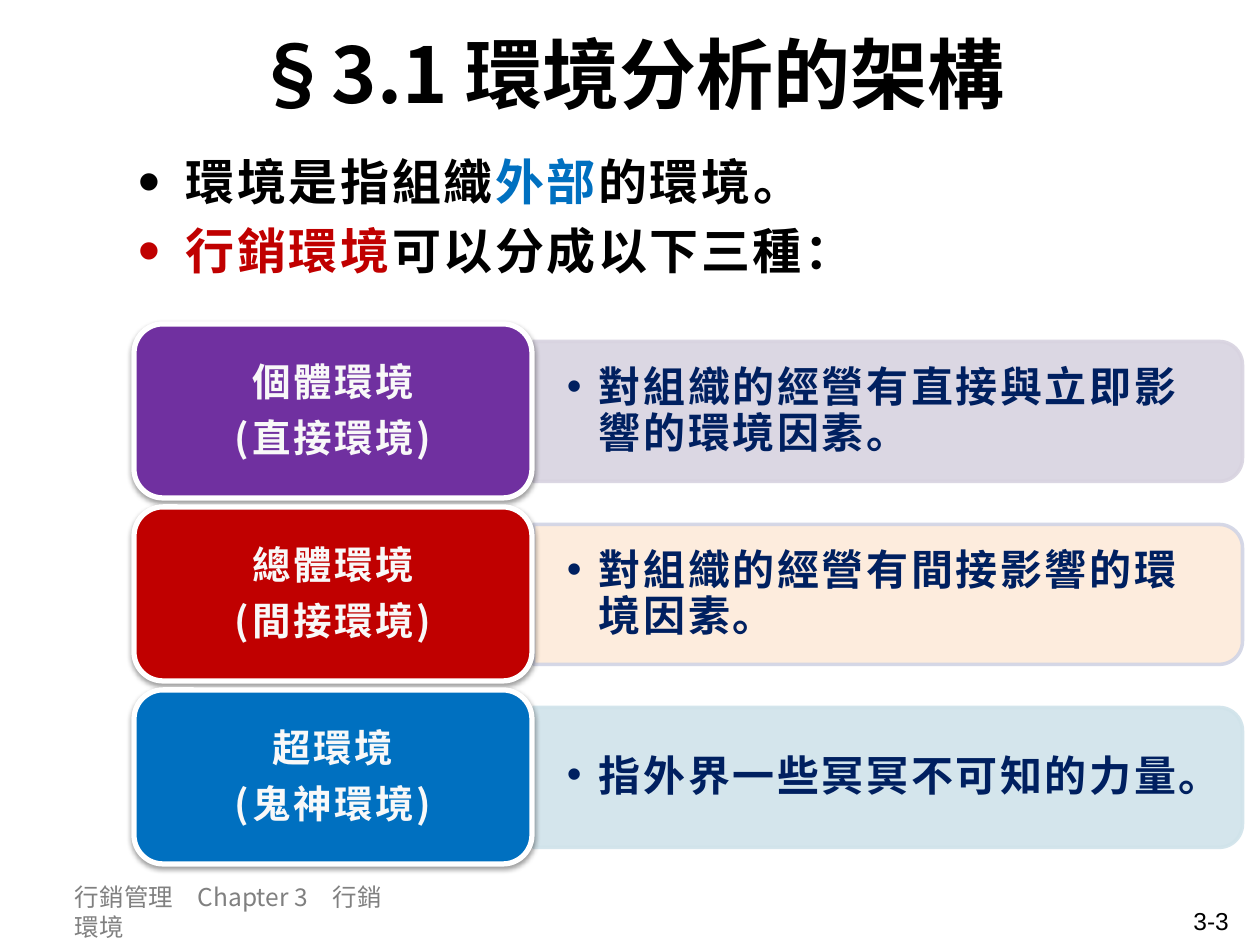
"""Build the slide on the framework of environment analysis."""
from dataclasses import dataclass

from lxml.etree import SubElement
from pptx import Presentation
from pptx.dml.color import RGBColor
from pptx.enum.shapes import MSO_SHAPE as Shape
from pptx.enum.text import MSO_ANCHOR as Anchor, PP_ALIGN as Align
from pptx.oxml.ns import qn
from pptx.util import Emu, Pt

PX = 914400 // 126
CJK = "Noto Sans CJK SC"
BLACK, NAVY, WHITE = "000000", "002060", "FFFFFF"
ROW_TOP, ROW_STEP = 324, 183


@dataclass(frozen=True)
class Box:
    left: int
    top: int
    width: int
    height: int

    def emu(self) -> list[Emu]:
        return [Emu(n * PX) for n in (self.left, self.top, self.width, self.height)]


@dataclass(frozen=True)
class Style:
    size: int
    color: str
    leading: int | None = None
    bold: bool = True
    tracking: int = 0
    font: str = CJK
    align: Align = Align.LEFT
    gap: float = 0
    indent: int = 0
    bullet_percent: int = 100


@dataclass(frozen=True)
class Environment:
    name: str
    kind: str
    description: str
    card: str
    bar: str
    edge: str


Line = list[tuple[str, str]]

TITLE = Style(44, BLACK, align=Align.CENTER)
BODY = Style(28, BLACK, 34, tracking=150, gap=5.6, indent=48, bullet_percent=130)
DESCRIPTION = Style(24, NAVY, 26, tracking=150, indent=32)
LABEL = Style(22, "F8F8F8", 24, tracking=150, align=Align.CENTER, gap=7.7)
FOOTER = Style(14, "808080", 17, bold=False)
NUMBER = Style(14, BLACK, bold=False, font="Arial", align=Align.RIGHT)

INTRODUCTION: list[Line] = [
    [("環境是指組織", BLACK), ("外部", "0070C0"), ("的環境。", BLACK)],
    [("行銷環境", "C00000"), ("可以分成以下三種：", BLACK)],
]
ENVIRONMENTS = [
    Environment("個體環境", "(直接環境)", "對組織的經營有直接與立即影響的環境因素。",
                "7030A0", "D8D3E0", "D8D3E0"),
    Environment("總體環境", "(間接環境)", "對組織的經營有間接影響的環境因素。",
                "C00000", "FDEADA", "D1D4E5"),
    Environment("超環境", "(鬼神環境)", "指外界一些冥冥不可知的力量。",
                "0070C0", "D0E3EA", "D0E3EA"),
]


def rgb(color: str) -> RGBColor:
    """Turn a hex string into a colour."""
    return RGBColor.from_string(color)


def format_paragraph(paragraph, style: Style) -> None:
    """Apply spacing, bullet and font to a paragraph."""
    paragraph.alignment = style.align
    if style.leading:
        paragraph.line_spacing = Pt(style.leading)
    properties = paragraph._p.get_or_add_pPr()
    if style.indent:
        properties.set("marL", str(style.indent * PX))
        properties.set("indent", str(-style.indent * PX))
        SubElement(properties, qn("a:buSzPct"), val=str(style.bullet_percent * 1000))
        SubElement(properties, qn("a:buFont"), typeface="Arial")
        SubElement(properties, qn("a:buChar"), char="•")
    font = paragraph.font
    font.size, font.bold, font.name = Pt(style.size), style.bold, style.font
    font.color.rgb = rgb(style.color)
    defaults = properties.find(qn("a:defRPr"))
    defaults.set("spc", str(style.tracking))
    SubElement(defaults, qn("a:ea"), typeface=style.font)


def add_text(slide, box: Box, lines: list[Line], style: Style,
             anchor: Anchor = Anchor.TOP, inset: tuple[int, int] = (12, 6)) -> None:
    """Add a text box with one paragraph per line."""
    frame = slide.shapes.add_textbox(*box.emu()).text_frame
    frame.word_wrap = True
    frame.vertical_anchor = anchor
    frame.margin_left = frame.margin_right = Emu(inset[0] * PX)
    frame.margin_top = frame.margin_bottom = Emu(inset[1] * PX)
    for index, line in enumerate(lines):
        paragraph = frame.add_paragraph() if index else frame.paragraphs[0]
        format_paragraph(paragraph, style)
        if index:
            paragraph.space_before = Pt(style.gap)
        for text, color in line:
            run = paragraph.add_run()
            run.text = text
            if color != style.color:
                run.font.color.rgb = rgb(color)


def add_plain(slide, box: Box, texts: list[str], style: Style, **options) -> None:
    """Add a text box whose lines each have one colour."""
    add_text(slide, box, [[(text, style.color)] for text in texts], style, **options)


def add_panel(slide, kind: Shape, box: Box, fill: str, edge: str, weight: int):
    """Add a filled and outlined shape without a shadow."""
    shape = slide.shapes.add_shape(kind, *box.emu())
    shape.shadow.inherit = False
    shape.fill.solid()
    shape.fill.fore_color.rgb = rgb(fill)
    shape.line.color.rgb = rgb(edge)
    shape.line.width = Pt(weight)
    return shape


def add_environment(slide, top: int, item: Environment) -> None:
    """Draw one environment as a card with a description bar."""
    bar = add_panel(slide, Shape.ROUND_2_SAME_RECTANGLE,
                    Box(818, top - 267, 140, 709), item.bar, item.edge, 2)
    bar.rotation = 90
    for color in bar._element.spPr.iter(qn("a:srgbClr")):
        SubElement(color, qn("a:alpha"), val="90000")
    add_plain(slide, Box(533, top + 24, 702, 126), [item.description], DESCRIPTION,
              anchor=Anchor.MIDDLE, inset=(34, 17))
    card = add_panel(slide, Shape.ROUNDED_RECTANGLE,
                     Box(134, top, 398, 174), item.card, WHITE, 3)
    effects = card._element.spPr.find(qn("a:effectLst"))
    shadow = SubElement(effects, qn("a:outerShdw"), blurRad=str(Pt(3.1)),
                        dist=str(Pt(1.6)), dir="5400000", rotWithShape="0")
    tint = SubElement(shadow, qn("a:srgbClr"), val=BLACK)
    SubElement(tint, qn("a:alpha"), val="38000")
    add_plain(slide, Box(142, top + 8, 382, 158), [item.name, item.kind], LABEL,
              anchor=Anchor.MIDDLE)


def main() -> None:
    """Build and save the presentation."""
    presentation = Presentation()
    presentation.slide_width, presentation.slide_height = Emu(1260 * PX), Emu(945 * PX)
    slide = presentation.slides.add_slide(presentation.slide_layouts[6])
    add_plain(slide, Box(63, 0, 1134, 145), ["§3.1 環境分析的架構"], TITLE,
              anchor=Anchor.MIDDLE)
    add_text(slide, Box(126, 145, 1134, 218), INTRODUCTION, BODY)
    add_plain(slide, Box(63, 876, 339, 50), ["行銷管理　Chapter 3　行銷環境"], FOOTER)
    add_plain(slide, Box(948, 900, 293, 36), ["3-3"], NUMBER)
    for index, item in enumerate(ENVIRONMENTS):
        add_environment(slide, ROW_TOP + index * ROW_STEP, item)
    presentation.save("out.pptx")


if __name__ == "__main__":
    main()
